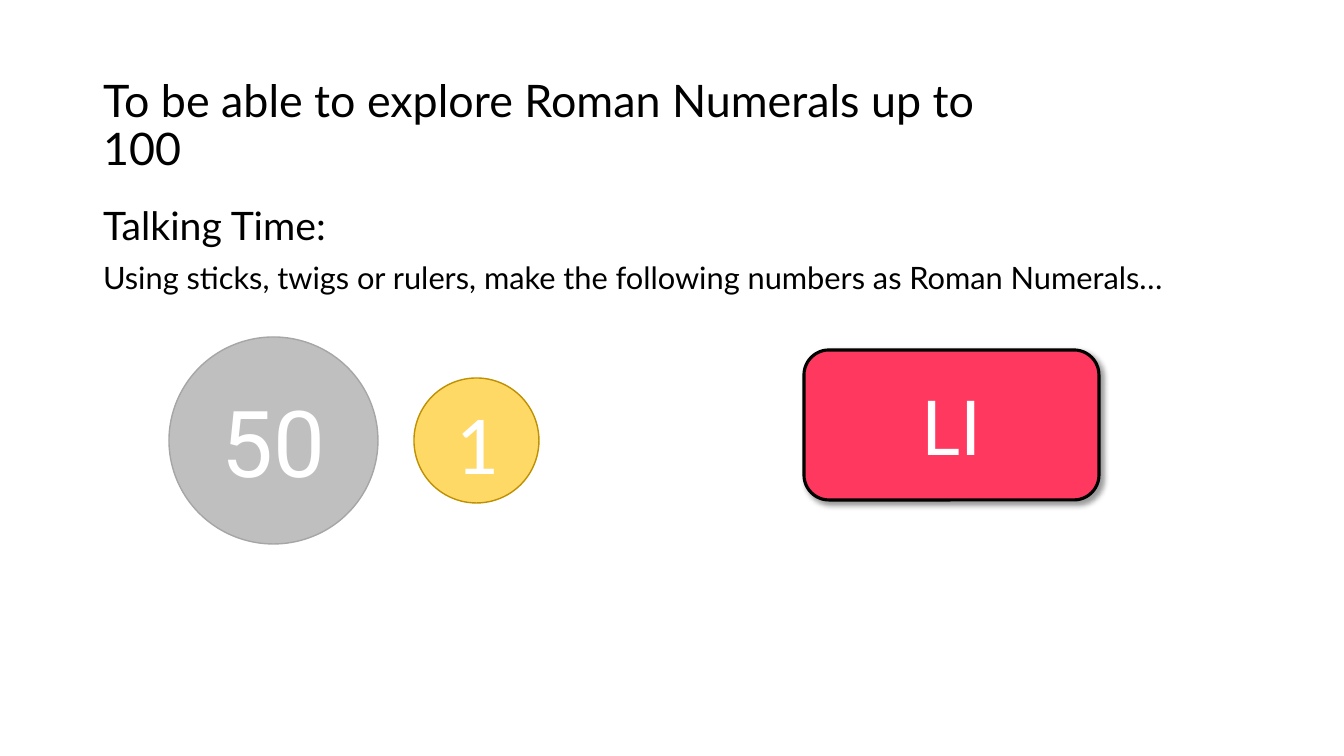
"""Build a lesson slide on making Roman numerals up to 100."""
from dataclasses import dataclass

from lxml.etree import SubElement
from pptx import Presentation
from pptx.dml.color import RGBColor as Rgb
from pptx.enum.shapes import MSO_SHAPE as Shape
from pptx.enum.text import MSO_ANCHOR as Anchor, MSO_AUTO_SIZE as AutoSize, PP_ALIGN as Align
from pptx.oxml import parse_xml
from pptx.oxml.ns import qn
from pptx.util import Emu, Pt


@dataclass(frozen=True)
class Theme:
    ink: str = "000000"
    paper: str = "FFFFFF"
    grey: str = "BFBFBF"
    grey_edge: str = "A6A6A6"
    gold: str = "FFD966"
    gold_edge: str = "BF9000"
    red: str = "FF3860"
    lato: str = "Lato"
    roboto: str = "Roboto"
    calibri: str = "Calibri"
    title: int = 32
    heading: int = 28
    task: int = 22
    fifty: int = 66
    one: int = 60
    answer: int = 54


theme = Theme()
PX = 914400 / 100.8


def place(part, *box):
    part.left, part.top, part.width, part.height = (Emu(round(v * PX)) for v in box)


def write(paragraph, text, *, size, font=theme.lato, colour=theme.ink,
          align=Align.LEFT, spacing=None, before=0):
    paragraph.alignment = align
    paragraph.line_spacing = spacing
    paragraph.space_before = Pt(before)
    run = paragraph.add_run()
    run.text = text
    run.font.size = Pt(size)
    run.font.name = font
    run.font.color.rgb = Rgb.from_string(colour)


deck = Presentation()
deck.slide_width, deck.slide_height = Emu(round(1344 * PX)), Emu(round(756 * PX))
slide = deck.slides.add_slide(deck.slide_layouts[1])

objective = slide.shapes.title
place(objective, 93, 54, 968, 146)
objective.text_frame.auto_size = AutoSize.NONE
objective.text_frame.vertical_anchor = Anchor.MIDDLE
write(objective.text_frame.paragraphs[0], "To be able to explore Roman Numerals up to 100",
      size=theme.title, spacing=0.9)

talking_time = slide.placeholders[1]
place(talking_time, 93, 202, 1159, 480)
talking_time.text_frame.auto_size = AutoSize.NONE
heading = talking_time.text_frame.paragraphs[0]
task = talking_time.text_frame.add_paragraph()
for paragraph, text, size, before in (
    (heading, "Talking Time:", theme.heading, 0),
    (task, "Using sticks, twigs or rulers, make the following numbers as Roman Numerals…",
     theme.task, 10),
):
    properties = paragraph._p.get_or_add_pPr()
    properties.set("marL", "0")
    properties.set("indent", "0")
    SubElement(properties, qn("a:buNone"))
    write(paragraph, text, size=size, spacing=0.9, before=before)

for preset, box, fill, edge, weight, text, size, font in (
    (Shape.ROUNDED_RECTANGLE, (804, 350, 295, 150), theme.red, theme.ink, 2.25,
     "LI", theme.answer, theme.lato),
    (Shape.OVAL, (169, 337, 209, 207), theme.grey, theme.grey_edge, 1,
     "50", theme.fifty, theme.roboto),
    (Shape.OVAL, (414, 378, 125, 125), theme.gold, theme.gold_edge, 1,
     "1", theme.one, theme.calibri),
):
    number = slide.shapes.add_shape(preset, 0, 0, 0, 0)
    place(number, *box)
    number.shadow.inherit = False
    number.fill.solid()
    number.fill.fore_color.rgb = Rgb.from_string(fill)
    number.line.color.rgb = Rgb.from_string(edge)
    number.line.width = Pt(weight)
    number.text_frame.vertical_anchor = Anchor.MIDDLE
    write(number.text_frame.paragraphs[0], text, size=size, font=font,
          colour=theme.paper, align=Align.CENTER)
    if preset == Shape.ROUNDED_RECTANGLE:
        number._element.spPr.find(qn("a:effectLst")).append(parse_xml(
            '<a:outerShdw xmlns:a="http://schemas.openxmlformats.org/drawingml/2006/main"'
            f' blurRad="{Pt(4)}" dist="{Pt(3)}" dir="{45 * 60000}" algn="tl" rotWithShape="0">'
            f'<a:srgbClr val="{theme.ink}"><a:alpha val="40000"/></a:srgbClr></a:outerShdw>'))

deck.save("out.pptx")
